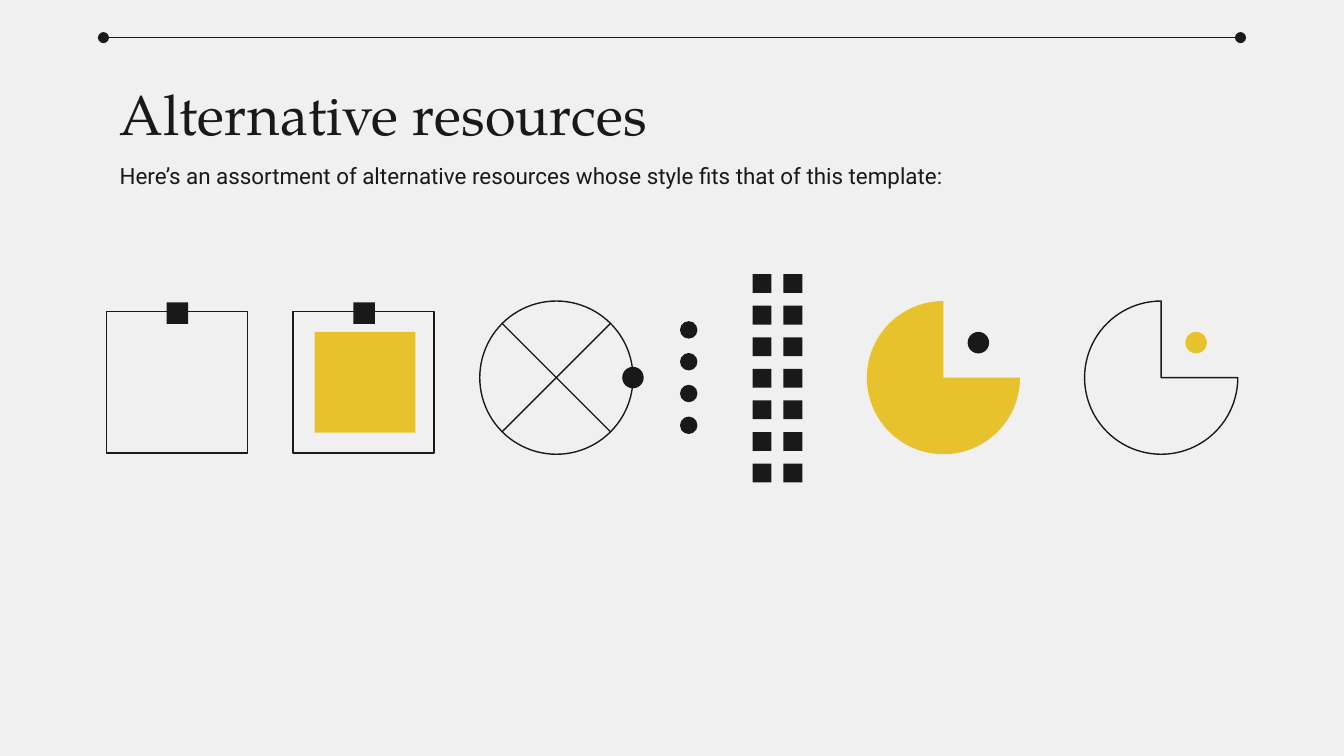
from lxml.etree import SubElement
from pptx import Presentation
from pptx.dml.color import RGBColor
from pptx.enum.shapes import MSO_CONNECTOR, MSO_SHAPE
from pptx.enum.text import MSO_ANCHOR, MSO_AUTO_SIZE, PP_ALIGN
from pptx.oxml.ns import qn
from pptx.util import Inches, Pt

INK = RGBColor(0x19, 0x19, 0x19)
YELLOW = RGBColor(0xE7, 0xC2, 0x2C)
PAPER = RGBColor(0xF0, 0xF0, 0xF0)


def fill_placeholder(placeholder, text, top, height, font_name, size, space_after=0):
    """Place a placeholder across the content width and set its single line of text."""
    placeholder.left, placeholder.top = Inches(0.79), Inches(top)
    placeholder.width, placeholder.height = Inches(8.43), Inches(height)
    frame = placeholder.text_frame
    frame.text = text
    frame.word_wrap = True
    frame.auto_size = MSO_AUTO_SIZE.NONE
    frame.vertical_anchor = MSO_ANCHOR.TOP
    frame.margin_left = frame.margin_right = Inches(0.1)
    frame.margin_top = frame.margin_bottom = Inches(0.1)
    paragraph = frame.paragraphs[0]
    paragraph.alignment = PP_ALIGN.LEFT
    paragraph.space_before, paragraph.space_after = Pt(0), Pt(space_after)
    paragraph.font.name, paragraph.font.size = font_name, Pt(size)
    paragraph.font.color.rgb = INK
    properties = paragraph._p.get_or_add_pPr()
    properties.set("marL", "0")
    properties.set("indent", "0")
    properties.insert_element_before(
        properties.makeelement(qn("a:buNone")), "a:tabLst", "a:defRPr", "a:extLst"
    )


def add_figure(group, kind, left, top, size, fill=None):
    """Add a square-sized shape, either filled or outlined in ink."""
    shape = group.shapes.add_shape(
        kind, Inches(left), Inches(top), Inches(size), Inches(size)
    )
    shape.shadow.inherit = False
    if fill is None:
        shape.fill.background()
        shape.line.color.rgb = INK
        shape.line.width = Pt(0.75)
    else:
        shape.fill.solid()
        shape.fill.fore_color.rgb = fill
        shape.line.fill.background()
    return shape


def add_rule(slide):
    """Add the top rule with a dot at each end."""
    rule = slide.shapes.add_connector(
        MSO_CONNECTOR.STRAIGHT, Inches(0.77), Inches(0.28), Inches(9.23), Inches(0.28)
    )
    rule.line.color.rgb = INK
    rule.line.width = Pt(0.75)
    line = rule.line._get_or_add_ln()
    for end in ("a:headEnd", "a:tailEnd"):
        SubElement(line, qn(end), type="oval")
    SubElement(rule._element.spPr, qn("a:effectLst"))


def add_frame(slide, left, filled=False):
    """Add a square frame with a tab on its top edge and an optional yellow panel."""
    group = slide.shapes.add_group_shape()
    add_figure(group, MSO_SHAPE.RECTANGLE, left, 2.32, 1.05)
    add_figure(group, MSO_SHAPE.RECTANGLE, left + 0.45, 2.25, 0.16, INK)
    if filled:
        add_figure(group, MSO_SHAPE.RECTANGLE, left + 0.16, 2.47, 0.75, YELLOW)


def add_crossed_circle(slide):
    """Add the crossed circle with a dot on its right edge."""
    group = slide.shapes.add_group_shape()
    add_figure(group, MSO_SHAPE.FLOWCHART_SUMMING_JUNCTION, 3.57, 2.24, 1.14)
    add_figure(group, MSO_SHAPE.OVAL, 4.63, 2.73, 0.16, INK)


def add_grid(slide, kind, left, top, size, rows, columns, pitch):
    """Add a group of evenly spaced ink marks."""
    group = slide.shapes.add_group_shape()
    for row in range(rows):
        for column in range(columns):
            add_figure(
                group, kind, left + column * 0.23, top + row * pitch, size, INK
            )


def add_pie(slide, left, pie_fill, dot_fill):
    """Add a three-quarter pie with a dot in the open quarter."""
    group = slide.shapes.add_group_shape()
    pie = add_figure(group, MSO_SHAPE.PIE, left, 2.24, 1.14, pie_fill)
    pie.adjustments[0], pie.adjustments[1] = 0, 162
    add_figure(group, MSO_SHAPE.OVAL, left + 0.75, 2.47, 0.16, dot_fill)


def main():
    """Build the slide and save it."""
    presentation = Presentation()
    presentation.slide_width = Inches(10)
    presentation.slide_height = Inches(10) * 9 // 16
    slide = presentation.slides.add_slide(presentation.slide_layouts[1])
    slide.background.fill.solid()
    slide.background.fill.fore_color.rgb = PAPER
    title, body = slide.placeholders
    fill_placeholder(
        title, "Alternative resources", 0.49, 0.63, "TeX Gyre Pagella", 30
    )
    fill_placeholder(
        body,
        "Here’s an assortment of alternative resources whose style fits that of this template:",
        1.11, 0.42, "Roboto", 12, space_after=10,
    )
    add_rule(slide)
    add_frame(slide, 0.79)
    add_frame(slide, 2.18, filled=True)
    add_crossed_circle(slide)
    add_grid(slide, MSO_SHAPE.OVAL, 5.06, 2.39, 0.13, 4, 1, 0.71 / 3)
    add_grid(slide, MSO_SHAPE.RECTANGLE, 5.6, 2.04, 0.14, 7, 2, 1.41 / 6)
    add_pie(slide, 6.45, YELLOW, INK)
    add_pie(slide, 8.07, None, YELLOW)
    presentation.save("out.pptx")


if __name__ == "__main__":
    main()
